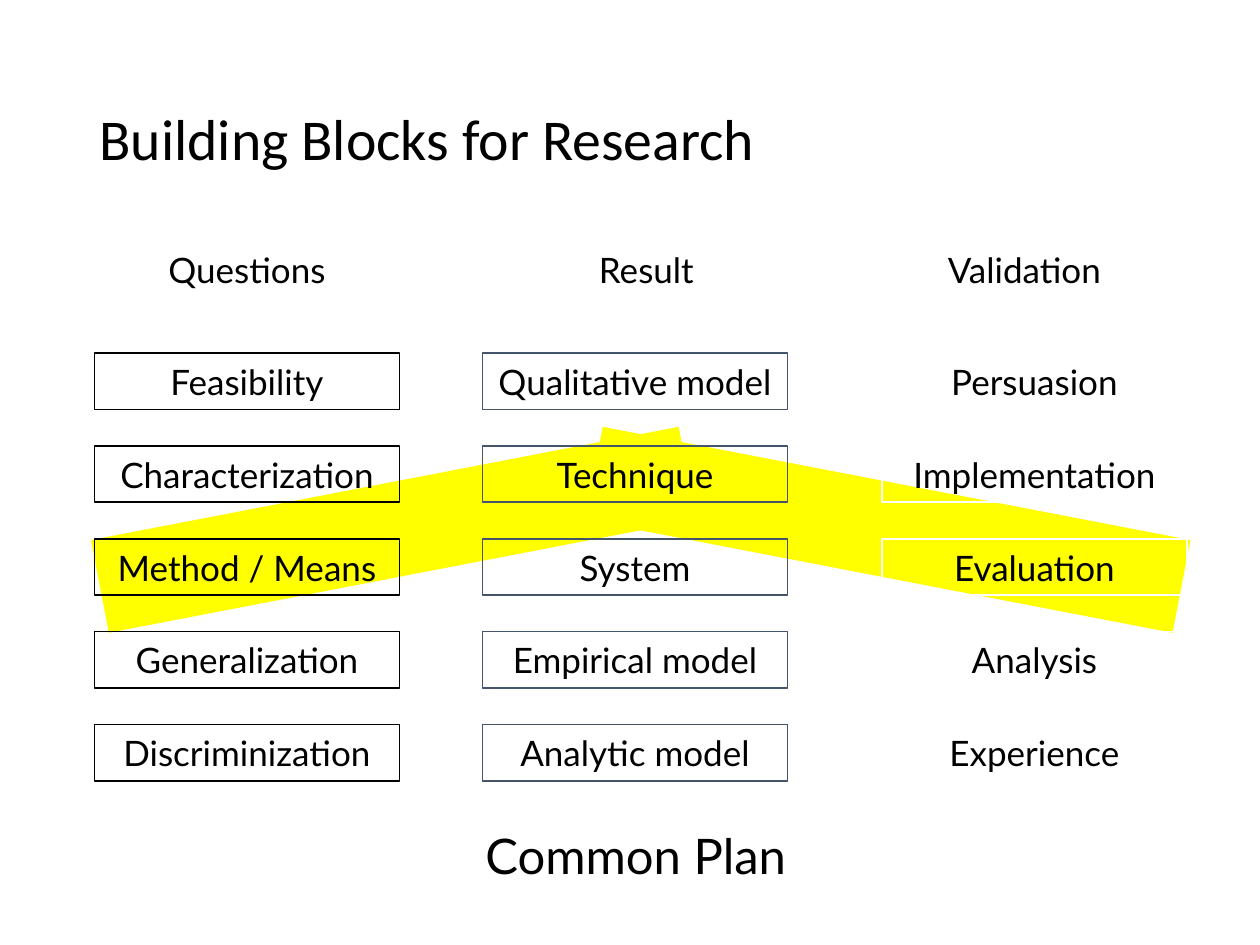
from pptx import Presentation
from pptx.dml.color import RGBColor
from pptx.enum.shapes import MSO_SHAPE
from pptx.enum.text import MSO_ANCHOR, PP_ALIGN
from pptx.util import Inches, Pt

RECT = MSO_SHAPE.RECTANGLE
MIDDLE = MSO_ANCHOR.MIDDLE
LEFT, CENTER = PP_ALIGN.LEFT, PP_ALIGN.CENTER

BLACK = RGBColor(0, 0, 0)
SLATE = RGBColor(0x44, 0x54, 0x6A)
WHITE = RGBColor(0xFF, 0xFF, 0xFF)
YELLOW = RGBColor(0xFF, 0xFF, 0)

WIDE, HIGH = 10, 7.5
COL_W, ROW_H, PITCH = 2.42, 0.45, 0.7375
TOP = 2.8
TILT = 10.9

# heading, heading left, box left, outline, items
COLUMNS = [
    ("Questions", 0.75, 0.75, BLACK,
     ["Feasibility", "Characterization", "Method / Means",
      "Generalization", "Discriminization"]),
    ("Result", 3.92, 3.83, SLATE,
     ["Qualitative model", "Technique", "System",
      "Empirical model", "Analytic model"]),
    ("Validation", 6.92, 7, WHITE,
     ["Persuasion", "Implementation", "Evaluation",
      "Analysis", "Experience"]),
]


def write(shape, text, size=20, font="Lato", align=CENTER):
    frame = shape.text_frame
    frame.word_wrap = True
    frame.vertical_anchor = MIDDLE
    para = frame.paragraphs[0]
    para.alignment = align
    run = para.add_run()
    run.text = text
    run.font.size = Pt(size)
    run.font.name = font
    run.font.color.rgb = BLACK
    return para


def add_label(slide, box, text, **style):
    label = slide.shapes.add_textbox(*map(Inches, box))
    return write(label, text, **style)


def add_rect(slide, box):
    rect = slide.shapes.add_shape(RECT, *map(Inches, box))
    rect.shadow.inherit = False
    return rect


def add_band(slide, box, angle):
    """Place a tilted highlight behind the grid."""
    band = add_rect(slide, box)
    band.fill.solid()
    band.fill.fore_color.rgb = YELLOW
    band.line.fill.background()
    band.rotation = angle


def add_column(slide, left, color, items):
    """Stack one outlined box for each item."""
    for row, item in enumerate(items):
        cell = add_rect(slide, (left, TOP + row * PITCH, COL_W, ROW_H))
        cell.fill.background()
        cell.line.color.rgb = color
        cell.line.width = Pt(1)
        write(cell, item)


def main():
    deck = Presentation()
    deck.slide_width, deck.slide_height = Inches(WIDE), Inches(HIGH)
    slide = deck.slides.add_slide(deck.slide_layouts[6])

    add_band(slide, (4.67, 3.83, 4.75, 0.75), TILT)
    add_band(slide, (0.75, 3.83, 4.75, 0.75), -TILT)
    title = add_label(slide, (0.69, 0.4, 8.62, 1.45),
                      "Building Blocks for Research",
                      size=33, font="Calibri", align=LEFT)
    title.line_spacing = 0.9

    for head, head_left, left, color, items in COLUMNS:
        add_column(slide, left, color, items)
        add_label(slide, (head_left, 1.92, COL_W, 0.43), head)
    add_label(slide, (2.42, 6.5, 5.25, 0.57), "Common Plan", size=28)

    deck.save("out.pptx")


if __name__ == "__main__":
    main()
